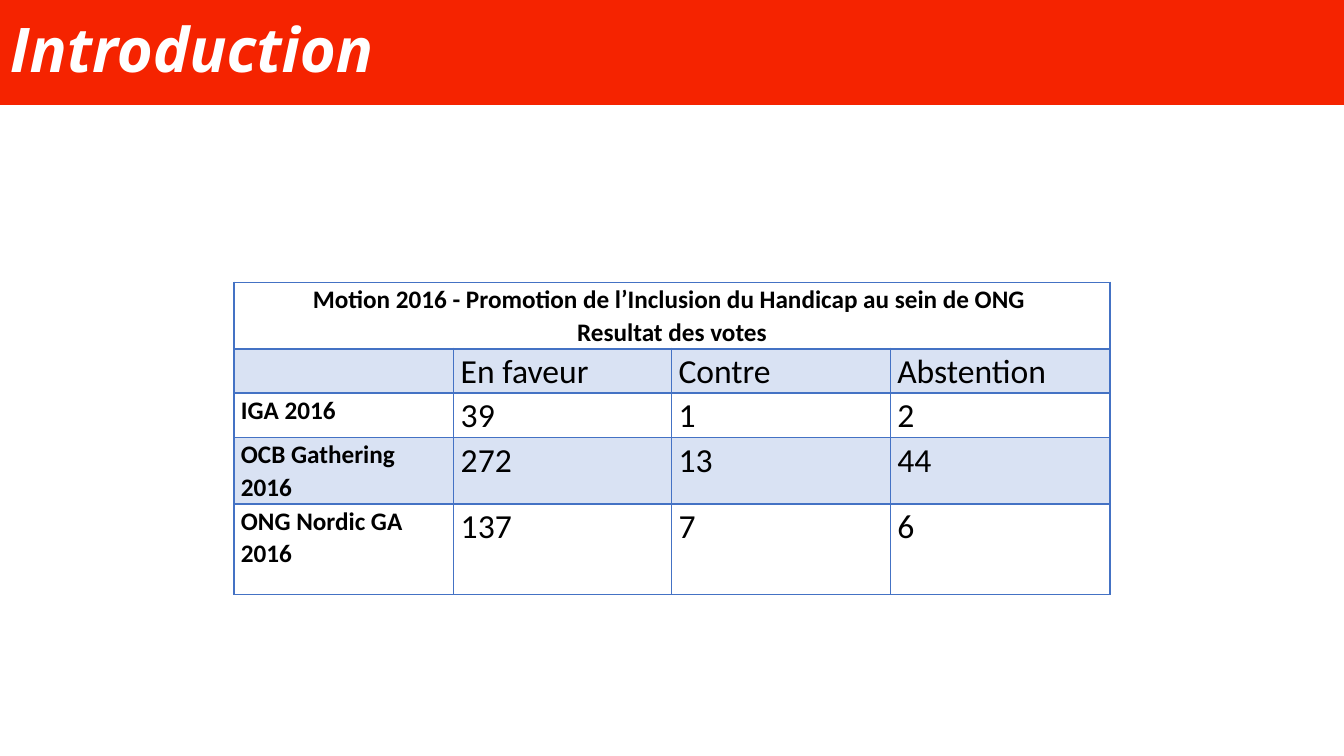
from lxml.etree import SubElement
from pptx import Presentation
from pptx.dml.color import RGBColor
from pptx.enum.shapes import MSO_SHAPE as Shape
from pptx.enum.text import MSO_ANCHOR as Anchor, PP_ALIGN as Align
from pptx.oxml.ns import qn
from pptx.util import Inches, Pt

RED, BLUE, WHITE, BLACK = "F52300", "4472C4", "FFFFFF", "000000"


def color(value):
    return RGBColor.from_string(value)


class SlideBuilder:
    """Holds the style and the current slide."""
    heading_font = "Open Sans"
    body_font = "Calibri"

    def __init__(self, page):
        self.page = page

    def style(self, para, name, size, ink, bold, italic=False):
        font = para.font
        font.name, font.size = name, Pt(size)
        font.bold, font.italic = bold, italic
        font.color.rgb = color(ink)

    def title_bar(self, text, left, top, width, height):
        bar = self.page.shapes.add_shape(
            Shape.RECTANGLE, Inches(left), Inches(top), Inches(width), Inches(height))
        bar.shadow.inherit = False
        bar.fill.solid()
        bar.fill.fore_color.rgb = color(RED)
        bar.line.fill.background()
        frame = bar.text_frame
        frame.word_wrap = True
        frame.vertical_anchor = Anchor.MIDDLE
        para = frame.paragraphs[0]
        para.text = text
        para.alignment = Align.LEFT
        para.line_spacing = 0.9
        self.style(para, self.heading_font, 44, WHITE, True, True)

    def borders(self, cell, bottom_width):
        properties = cell._tc.get_or_add_tcPr()
        for side in ("L", "R", "T", "B"):
            width = bottom_width if side == "B" else 1
            line = SubElement(properties, qn(f"a:ln{side}"), w=str(Pt(width)))
            fill = SubElement(line, qn("a:solidFill"))
            SubElement(fill, qn("a:srgbClr"), val=BLUE)

    def cell(self, cell, text, size, bold, alignment, shaded, bottom_width=1):
        cell.margin_left = cell.margin_right = Inches(0.07)
        cell.margin_top = cell.margin_bottom = 0
        self.borders(cell, bottom_width)
        if shaded:
            cell.fill.solid()
            cell.fill.fore_color.rgb = color(BLUE)
            tint = cell._tc.tcPr.find(qn("a:solidFill"))[0]
            SubElement(tint, qn("a:alpha"), val="20000")
        else:
            cell.fill.background()
        cell.text_frame.text = text
        for para in cell.text_frame.paragraphs:
            para.alignment = alignment
            para.line_spacing = 1.07
            self.style(para, self.body_font, size, BLACK, bold)

    def vote_table(self, heading, rows, left, top, widths, heights):
        table = self.page.shapes.add_table(
            len(heights), len(widths), Inches(left), Inches(top),
            Inches(sum(widths)), Inches(sum(heights))).table
        table.first_row = table.horz_banding = False
        for column, width in zip(table.columns, widths):
            column.width = Inches(width)
        for row, height in zip(table.rows, heights):
            row.height = Inches(height)

        # Heading across all columns
        for index in range(len(widths)):
            text = heading if index == 0 else ""
            self.cell(table.cell(0, index), text, 18, True, Align.CENTER, False, 2)
        table.cell(0, 0).merge(table.cell(0, len(widths) - 1))

        # Bold labels in the first column, every other row shaded
        for r, values in enumerate(rows, 1):
            for c, text in enumerate(values):
                label = c == 0
                self.cell(table.cell(r, c), text, 18 if label else 24, label,
                          Align.LEFT, r % 2 == 1)


def main():
    deck = Presentation()
    deck.slide_width, deck.slide_height = Inches(13.33), Inches(7.5)
    builder = SlideBuilder(deck.slides.add_slide(deck.slide_layouts[6]))

    # Title
    builder.title_bar("Introduction", 0, 0, 13.33, 1.04)

    # Vote results
    heading = ("Motion 2016 - Promotion de l’Inclusion du Handicap au sein de ONG \n"
               "Resultat des votes")
    rows = [
        ("", "En faveur", "Contre", "Abstention"),
        ("IGA 2016", "39", "1", "2"),
        ("OCB Gathering 2016", "272", "13", "44"),
        ("ONG Nordic GA 2016", "137", "7", "6"),
    ]
    builder.vote_table(heading, rows, 2.32, 2.8,
                       widths=(2.18, 2.16, 2.17, 2.18),
                       heights=(0.66, 0.44, 0.44, 0.66, 0.9))

    deck.save("out.pptx")


if __name__ == "__main__":
    main()
